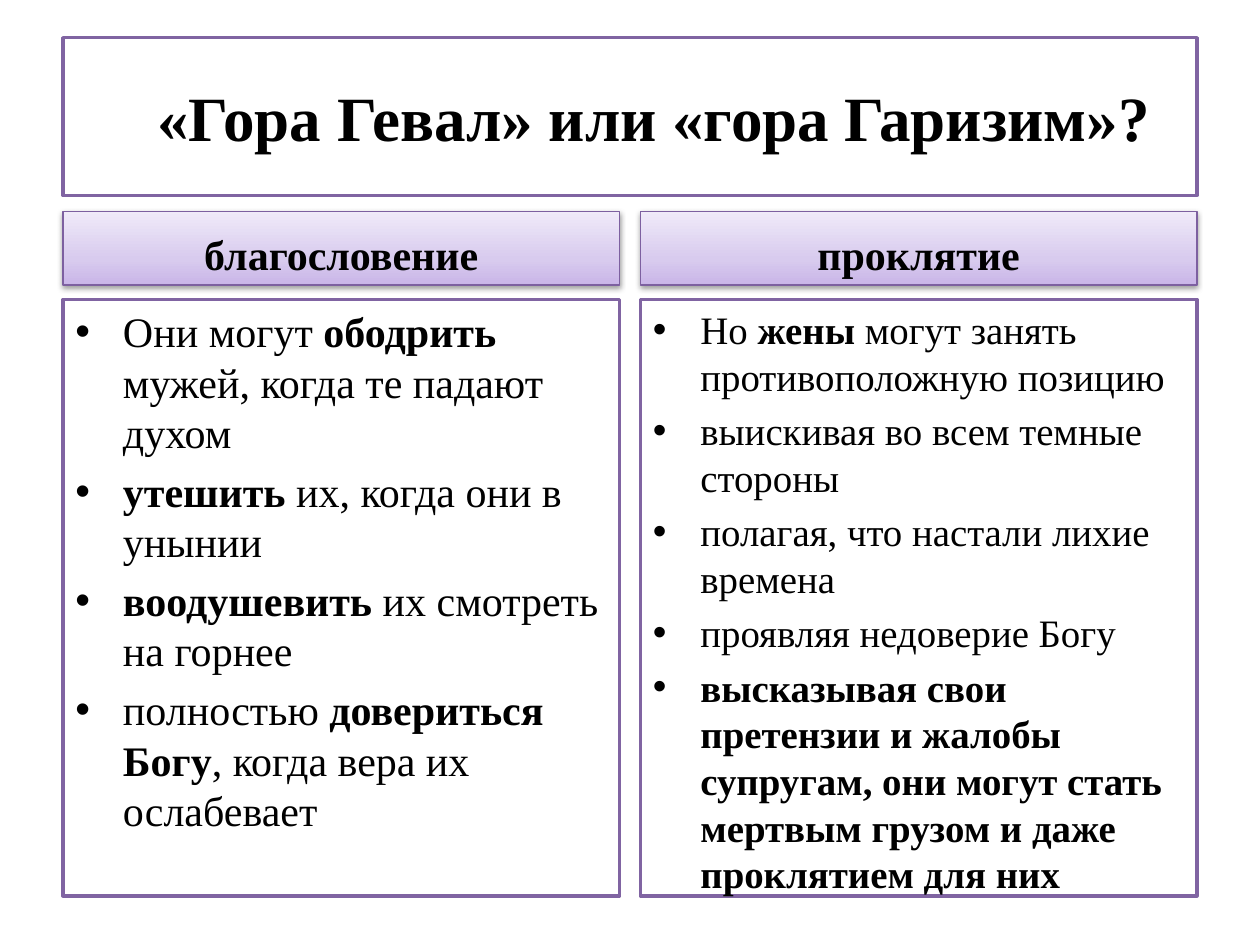
from dataclasses import dataclass

from lxml.etree import SubElement
from pptx import Presentation
from pptx.dml.color import RGBColor
from pptx.enum.shapes import MSO_SHAPE
from pptx.enum.text import MSO_ANCHOR, PP_ALIGN
from pptx.oxml import parse_xml
from pptx.oxml.ns import nsdecls, qn
from pptx.shapes.autoshape import Shape
from pptx.slide import Slide
from pptx.text.text import _Paragraph
from pptx.util import Cm, Length, Pt

BLACK = RGBColor(0x00, 0x00, 0x00)
WHITE = RGBColor(0xFF, 0xFF, 0xFF)
PURPLE = RGBColor(0x80, 0x64, 0xA2)
HEADING_LINE = RGBColor(0x7D, 0x60, 0xA0)
GRADIENT = (
    (0, RGBColor(0xC9, 0xB5, 0xE8)),
    (35, RGBColor(0xD8, 0xCB, 0xEE)),
    (100, RGBColor(0xF0, 0xEA, 0xF9)),
)
FONT = "Times New Roman"
MARGIN = Cm(1.27)
COLUMN_WIDTH = Cm(11.22)
CONTENT_WIDTH = Cm(22.86)
INDENT = Cm(0.96)


@dataclass(frozen=True)
class TextRun:
    """A stretch of text in one weight."""

    text: str
    bold: bool = False


@dataclass(frozen=True)
class Column:
    """A heading with the bulleted list below it."""

    heading: str
    left: Length
    size: float
    items: tuple[tuple[TextRun, ...], ...]


COLUMNS = (
    Column("благословение", MARGIN, 24, (
        (TextRun("Они могут "), TextRun("ободрить ", True),
         TextRun("мужей, когда те падают духом")),
        (TextRun("утешить", True), TextRun(" их, когда они в унынии")),
        (TextRun("воодушевить", True), TextRun(" их смотреть на горнее")),
        (TextRun("полностью "), TextRun("довериться Богу", True),
         TextRun(", когда вера их ослабевает")),
    )),
    Column("проклятие", MARGIN + CONTENT_WIDTH - COLUMN_WIDTH, 22.2, (
        (TextRun("Но "), TextRun("жены", True),
         TextRun(" могут занять противоположную позицию")),
        (TextRun("выискивая во всем темные стороны"),),
        (TextRun("полагая, что настали лихие времена"),),
        (TextRun("проявляя недоверие Богу"),),
        (TextRun("высказывая свои претензии и жалобы супругам, они могут стать "
                 "мертвым грузом и даже проклятием для них", True),),
    )),
)


def add_box(slide: Slide, left: Length, top: Length, width: Length, height: Length,
            anchor: MSO_ANCHOR) -> Shape:
    """Add a white rectangle with a purple outline."""
    shape = slide.shapes.add_shape(MSO_SHAPE.RECTANGLE, left, top, width, height)
    shape.shadow.inherit = False
    shape.fill.solid()
    shape.fill.fore_color.rgb = WHITE
    shape.line.color.rgb = PURPLE
    shape.line.width = Pt(2)
    shape.text_frame.word_wrap = True
    shape.text_frame.vertical_anchor = anchor
    return shape


def add_runs(paragraph: _Paragraph, runs: tuple[TextRun, ...], size: float,
             alignment: PP_ALIGN) -> None:
    """Write the runs into a paragraph."""
    paragraph.alignment = alignment
    for text_run in runs:
        run = paragraph.add_run()
        run.text = text_run.text
        run.font.name = FONT
        run.font.size = Pt(size)
        run.font.bold = text_run.bold
        run.font.color.rgb = BLACK


def add_bullet(paragraph: _Paragraph) -> None:
    """Give a paragraph a hanging round bullet."""
    properties = paragraph._p.get_or_add_pPr()
    properties.set("marL", str(INDENT))
    properties.set("indent", str(-INDENT))
    SubElement(properties, qn("a:buFont"), typeface="Arial")
    SubElement(properties, qn("a:buChar"), char="•")


def style_heading(shape: Shape) -> None:
    """Apply the gradient, thin outline and soft shadow of a heading."""
    shape.line.color.rgb = HEADING_LINE
    shape.line.width = Pt(0.75)
    properties = shape._element.spPr
    stops = "".join(
        f'<a:gs pos="{position * 1000}"><a:srgbClr val="{color}"/></a:gs>'
        for position, color in GRADIENT
    )
    properties.replace(properties.find(qn("a:solidFill")), parse_xml(
        f'<a:gradFill {nsdecls("a")} rotWithShape="1"><a:gsLst>{stops}</a:gsLst>'
        '<a:lin ang="16200000" scaled="0"/></a:gradFill>'
    ))
    properties.find(qn("a:effectLst")).append(parse_xml(
        f'<a:outerShdw {nsdecls("a")} blurRad="{Pt(3.1)}" dist="{Pt(1.6)}" '
        f'dir="5400000" rotWithShape="0"><a:srgbClr val="{BLACK}">'
        '<a:alpha val="38000"/></a:srgbClr></a:outerShdw>'
    ))


def add_title(slide: Slide) -> None:
    """Add the framed title."""
    shape = add_box(slide, MARGIN, Cm(0.76), CONTENT_WIDTH, Cm(3.18), MSO_ANCHOR.MIDDLE)
    shape.text_frame.margin_left = Cm(1.2)
    title = (TextRun("«Гора Гевал» или «гора Гаризим»?", True),)
    add_runs(shape.text_frame.paragraphs[0], title, 36, PP_ALIGN.CENTER)


def add_column(slide: Slide, column: Column) -> None:
    """Add the list and the heading of a column."""
    body = add_box(slide, column.left, Cm(6.04), COLUMN_WIDTH, Cm(12.02), MSO_ANCHOR.TOP)
    frame = body.text_frame
    for index, runs in enumerate(column.items):
        paragraph = frame.add_paragraph() if index else frame.paragraphs[0]
        add_runs(paragraph, runs, column.size, PP_ALIGN.LEFT)
        paragraph.space_before = Pt(column.size * 0.2)
        add_bullet(paragraph)
    heading = add_box(slide, column.left, Cm(4.26), COLUMN_WIDTH, Cm(1.49), MSO_ANCHOR.BOTTOM)
    style_heading(heading)
    add_runs(heading.text_frame.paragraphs[0], (TextRun(column.heading, True),), 24,
             PP_ALIGN.CENTER)


def main() -> None:
    """Build and save the presentation."""
    presentation = Presentation()
    presentation.slide_width = Cm(25.4)
    presentation.slide_height = Cm(19.05)
    slide = presentation.slides.add_slide(presentation.slide_layouts[6])
    add_title(slide)
    for column in COLUMNS:
        add_column(slide, column)
    presentation.save("out.pptx")


if __name__ == "__main__":
    main()
